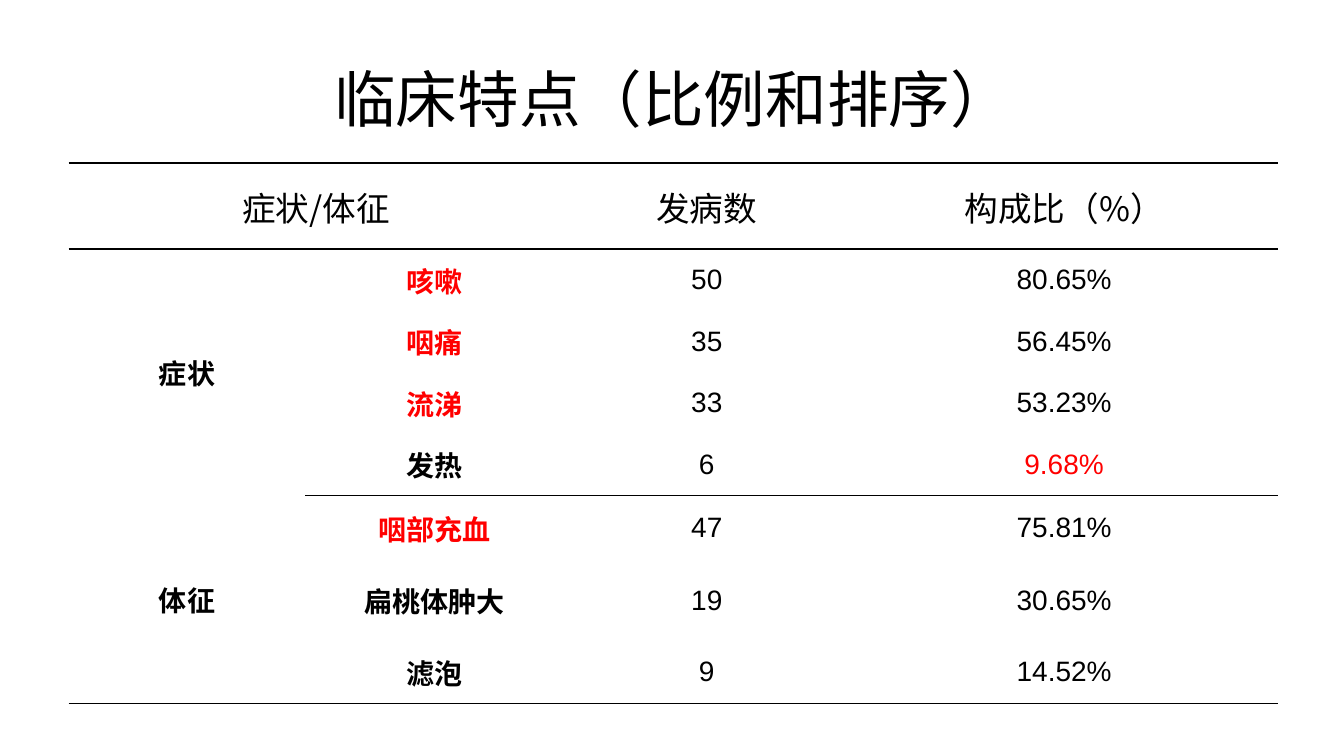
from lxml.etree import SubElement
from pptx import Presentation
from pptx.dml.color import RGBColor
from pptx.enum.text import MSO_ANCHOR, PP_ALIGN
from pptx.oxml.ns import qn
from pptx.util import Inches, Pt

TITLE = "临床特点（比例和排序）"
HEADER = ["症状/体征", "", "发病数", "构成比（%）"]
GROUPS = {
    "症状": [
        ("咳嗽", "50", "80.65%"),
        ("咽痛", "35", "56.45%"),
        ("流涕", "33", "53.23%"),
        ("发热", "6", "9.68%"),
    ],
    "体征": [
        ("咽部充血", "47", "75.81%"),
        ("扁桃体肿大", "19", "30.65%"),
        ("滤泡", "9", "14.52%"),
    ],
}
HIGHLIGHTS = {"咳嗽", "咽痛", "流涕", "咽部充血", "9.68%"}

COLORS = {"text": "000000", "highlight": "FF0000", "background": "FFFFFF"}
BODY_FONT, HEADER_FONT = "Arial", "Noto Sans CJK SC"
LEFT, WIDTH = 0.68, 12
COLUMN_WIDTHS = [2.35, 2.56, 2.84, 4.25]
ROW_HEIGHTS = [0.85, 0.61, 0.61, 0.61, 0.61, 0.65, 0.79, 0.63]
LAST_EDGE = len(ROW_HEIGHTS)
GROUP_EDGE = 1 + len(GROUPS["症状"])
RULES = {0: 1.5, 1: 1.5, GROUP_EDGE: 0.5, LAST_EDGE: 1.5}


def format_text(frame, size, font, color, bold=False):
    paragraph = frame.paragraphs[0]
    paragraph.alignment = PP_ALIGN.CENTER
    for run in paragraph.runs:
        run.font.size = Pt(size)
        run.font.name = font
        run.font.bold = bold
        run.font.color.rgb = RGBColor.from_string(COLORS[color])


def rule_width(edge, column):
    """Points of the horizontal rule at a row edge; the group rule skips column 0."""
    return 0 if edge == GROUP_EDGE and column == 0 else RULES.get(edge, 0)


def set_borders(cell, top, bottom):
    properties = cell._tc.get_or_add_tcPr()
    for side, points in (("L", 0), ("R", 0), ("T", top), ("B", bottom)):
        line = SubElement(properties, qn(f"a:ln{side}"), w=str(Pt(points)))
        if points:
            fill = SubElement(line, qn("a:solidFill"))
            SubElement(fill, qn("a:srgbClr"), val=COLORS["text"])
        else:
            SubElement(line, qn("a:noFill"))


def fill_cell(cell, text, row, column):
    cell.text_frame.text = text
    if row == 0:
        format_text(cell.text_frame, 24, HEADER_FONT, "text")
    else:
        color = "highlight" if text in HIGHLIGHTS else "text"
        format_text(cell.text_frame, 20, BODY_FONT, color, bold=column < 2)
    cell.vertical_anchor = MSO_ANCHOR.MIDDLE
    cell.margin_left = cell.margin_right = cell.margin_top = Inches(0.01)
    cell.margin_bottom = 0
    height = cell.span_height if cell.is_merge_origin else 1
    set_borders(cell, rule_width(row, column), rule_width(row + height, column))
    cell.fill.solid()
    cell.fill.fore_color.rgb = RGBColor.from_string(COLORS["background"])


def add_features_table(slide):
    table = slide.shapes.add_table(
        len(ROW_HEIGHTS), len(COLUMN_WIDTHS),
        Inches(LEFT), Inches(1.62), Inches(WIDTH), Inches(sum(ROW_HEIGHTS)),
    ).table
    table.first_row = table.horz_banding = False
    for column, width in zip(table.columns, COLUMN_WIDTHS):
        column.width = Inches(width)
    for row, height in zip(table.rows, ROW_HEIGHTS):
        row.height = Inches(height)

    rows = [HEADER]
    table.cell(0, 0).merge(table.cell(0, 1))
    for group, features in GROUPS.items():
        first = len(rows)
        for index, feature in enumerate(features):
            rows.append([group if index == 0 else "", *feature])
        table.cell(first, 0).merge(table.cell(len(rows) - 1, 0))

    for row, texts in enumerate(rows):
        for column, text in enumerate(texts):
            fill_cell(table.cell(row, column), text, row, column)


def main():
    deck = Presentation()
    deck.slide_width, deck.slide_height = Inches(13.33), Inches(7.5)
    slide = deck.slides.add_slide(deck.slide_layouts[5])
    title = slide.shapes.title
    title.left, title.top = Inches(LEFT), Inches(0.35)
    title.width, title.height = Inches(WIDTH), Inches(1.25)
    title.text_frame.text = TITLE
    title.text_frame.vertical_anchor = MSO_ANCHOR.MIDDLE
    format_text(title.text_frame, 44, BODY_FONT, "text")
    add_features_table(slide)
    deck.save("out.pptx")


if __name__ == "__main__":
    main()
